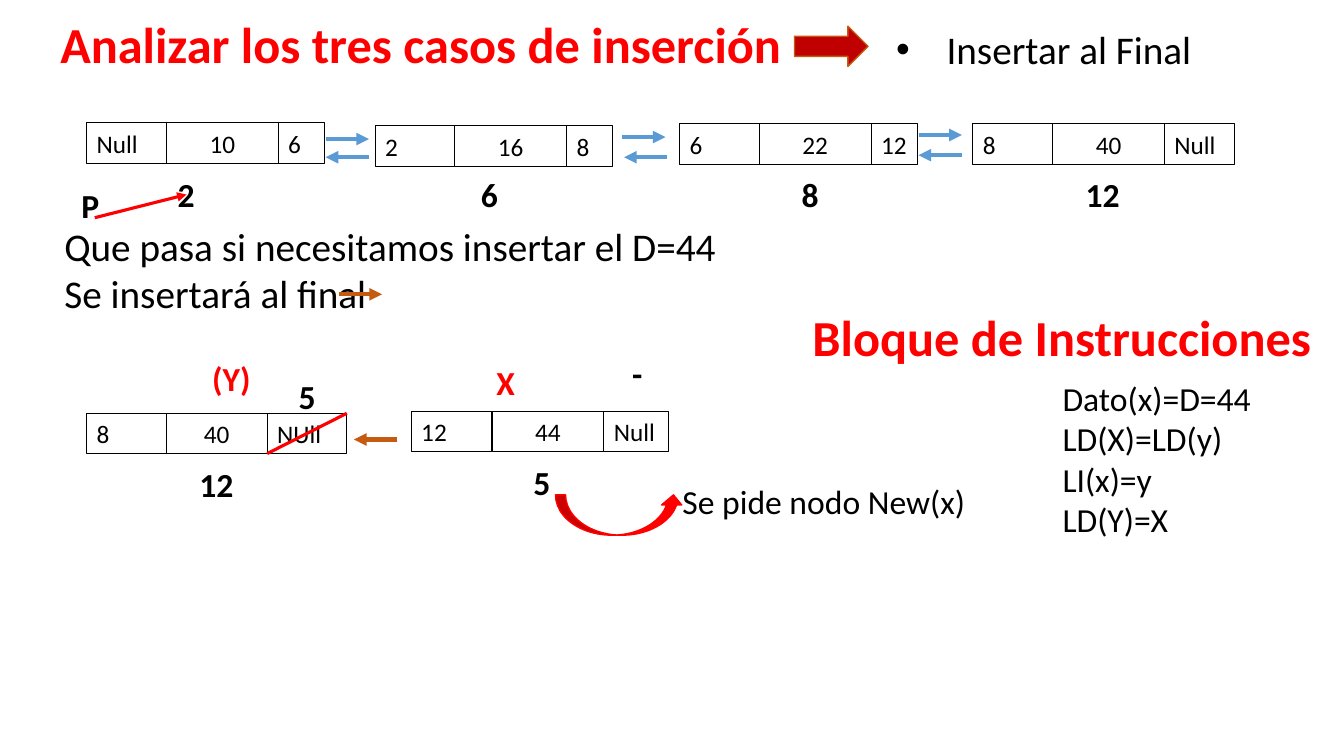
from lxml import etree
from pptx import Presentation
from pptx.dml.color import RGBColor
from pptx.enum.shapes import MSO_CONNECTOR, MSO_SHAPE
from pptx.enum.text import MSO_ANCHOR, MSO_AUTO_SIZE, PP_ALIGN
from pptx.oxml.ns import qn
from pptx.util import Pt

PX = 9144  # EMU per px, 100 px to the inch
FONT = "Calibri"
COLORS = {
    "black": "000000",
    "red": "FF0000",
    "dark_red": "C00000",
    "orange": "C55A11",
    "blue": "5B9BD5",
}
LEFT, CENTER = PP_ALIGN.LEFT, PP_ALIGN.CENTER
MIDDLE = MSO_ANCHOR.MIDDLE
GROW = MSO_AUTO_SIZE.SHAPE_TO_FIT_TEXT
STRAIGHT = MSO_CONNECTOR.STRAIGHT
RECTANGLE = MSO_SHAPE.RECTANGLE
RIGHT_ARROW = MSO_SHAPE.RIGHT_ARROW
CURVED_ARROW = MSO_SHAPE.CURVED_UP_ARROW

CELL_HEIGHT = 40
LINK_WIDTH = 43


def emu(*lengths):
    return [length * PX for length in lengths]


def rgb(color):
    return RGBColor.from_string(COLORS[color])


def write(frame, text, size, color="black", bold=False, align=LEFT):
    frame.word_wrap = True
    frame.auto_size = GROW
    frame.text = text
    for paragraph in frame.paragraphs:
        paragraph.alignment = align
        for run in paragraph.runs:
            run.font.name = FONT
            run.font.size = Pt(size)
            run.font.bold = bold
            run.font.color.rgb = rgb(color)


def add_text(slide, box, text, size, color="black", bold=False, align=LEFT):
    frame = slide.shapes.add_textbox(*emu(*box)).text_frame
    write(frame, text, size, color, bold, align)
    return frame


def add_label(slide, left, top, text, color="black", width=71):
    add_text(slide, (left, top, width, 50), text, 24, color, True, CENTER)


def add_bullet(slide, box, text, size):
    paragraph = add_text(slide, box, text, size).paragraphs[0]
    properties = paragraph._p.get_or_add_pPr()
    properties.set("marL", str(50 * PX))
    properties.set("indent", str(-50 * PX))
    etree.SubElement(properties, qn("a:buFont")).set("typeface", "Arial")
    etree.SubElement(properties, qn("a:buChar")).set("char", "•")


def add_line(slide, start, end, color, width, arrow=True):
    line = slide.shapes.add_connector(STRAIGHT, *emu(*start, *end))
    line.line.color.rgb = rgb(color)
    line.line.width = Pt(width)
    if arrow:
        outline = line.line._get_or_add_ln()
        etree.SubElement(outline, qn("a:tailEnd")).set("type", "triangle")
    etree.SubElement(line._element.spPr, qn("a:effectLst"))


def add_link(slide, left, y, color, forward=True):
    ends = [(left, y), (left + LINK_WIDTH, y)]
    start, end = ends if forward else reversed(ends)
    add_line(slide, start, end, color, 3)


def add_block_arrow(slide, kind, box, fill, outline):
    arrow = slide.shapes.add_shape(kind, *emu(*box))
    arrow.shadow.inherit = False
    arrow.fill.solid()
    arrow.fill.fore_color.rgb = rgb(fill)
    arrow.line.color.rgb = rgb(outline)
    arrow.line.width = Pt(1)


def add_node(slide, left, top, values, widths):
    """Draws left link, data and right link side by side."""
    for value, width, align in zip(values, widths, (LEFT, CENTER, LEFT)):
        cell = slide.shapes.add_shape(
            RECTANGLE, *emu(left, top, width, CELL_HEIGHT))
        cell.shadow.inherit = False
        cell.fill.background()
        cell.line.color.rgb = rgb("black")
        cell.line.width = Pt(0.75)
        write(cell.text_frame, value, 18, align=align)
        cell.text_frame.vertical_anchor = MIDDLE
        left += width


def main():
    prs = Presentation()
    prs.slide_width, prs.slide_height = emu(1333, 750)
    slide = prs.slides.add_slide(prs.slide_layouts[6])

    # Heading and case
    add_text(slide, (50, 8, 746, 71), "Analizar los tres casos de inserción",
             36, "red", True)
    add_block_arrow(slide, RIGHT_ARROW, (788, 26, 73, 40),
                    "dark_red", "orange")
    add_bullet(slide, (879, 20, 440, 57), "Insertar al Final", 28)

    # Question
    add_text(slide, (54, 216, 1224, 104),
             "Que pasa si necesitamos insertar el D=44\nSe insertará al final",
             28)
    add_link(slide, 336, 292, "orange")

    # Doubly linked list: nodes, then their addresses
    for left, top, values, last_width in (
        (86, 122, ("Null", "10", "6"), 46),
        (372, 125, ("2", "16", "8"), 46),
        (674, 123, ("6", "22", "12"), 46),
        (965, 123, ("8", "40", "Null"), 69),
    ):
        add_node(slide, left, top, values, (79, 111, last_width))
    for left, address in ((149, "2"), (450, "6"), (768, "8"), (1058, "12")):
        add_label(slide, left, 168, address)

    # Links between neighbouring nodes
    for next_left, next_y, back_left, back_y in (
        (323, 138, 323, 156),
        (617, 136, 619, 156),
        (911, 134, 911, 154),
    ):
        add_link(slide, next_left, next_y, "blue")
        add_link(slide, back_left, back_y, "blue", forward=False)

    # Pointer to the first node
    add_label(slide, 54, 179, "P")
    add_line(slide, (94, 216), (185, 193), "red", 2.25)

    # Last node (Y), with its Null crossed out
    add_node(slide, 86, 410, ("8", "40", "NUll"), (79, 100, 79))
    add_line(slide, (265, 450), (344, 410), "red", 2.25, arrow=False)
    add_label(slide, 194, 350, "(Y)", "red")
    add_label(slide, 269, 368, "5")
    add_label(slide, 179, 455, "12")
    add_link(slide, 351, 436, "orange", forward=False)

    # New node X
    add_node(slide, 408, 408, ("12", "44", "Null"), (80, 111, 64))
    add_label(slide, 466, 354, "X", "red")
    add_label(slide, 586, 345, "-", width=92)
    add_label(slide, 502, 453, "5")
    add_block_arrow(slide, CURVED_ARROW, (551, 491, 127, 40), "red", "red")
    add_text(slide, (667, 472, 368, 50), "Se pide nodo New(x)", 24)

    # Instructions
    add_text(slide, (796, 299, 532, 71), "Bloque de Instrucciones",
             36, "red", True)
    add_text(slide, (1044, 370, 220, 172),
             "Dato(x)=D=44\nLD(X)=LD(y)\nLI(x)=y\nLD(Y)=X", 24)

    prs.save("out.pptx")


if __name__ == "__main__":
    main()
